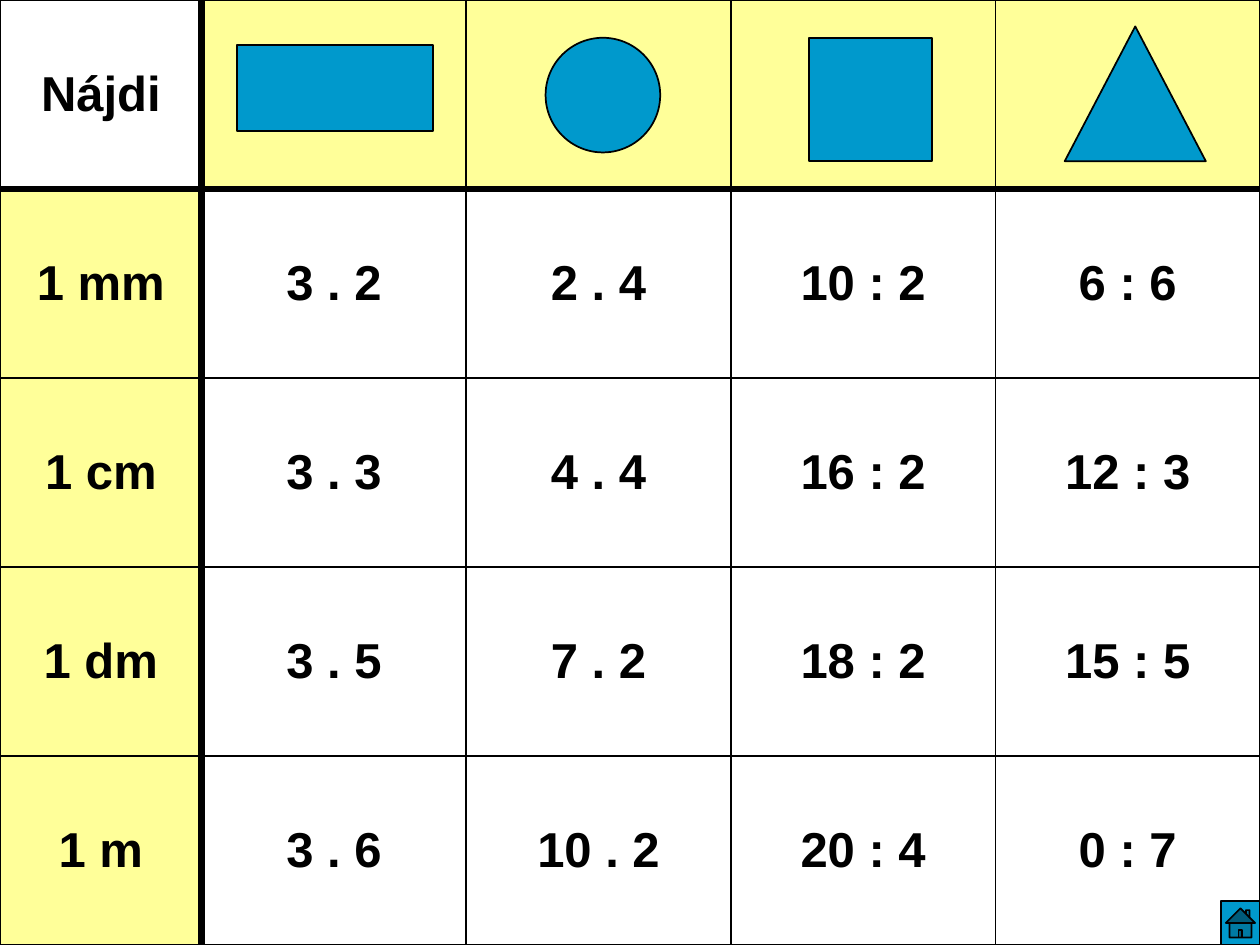
"""Build a matching grid of length units, shapes and sums."""
from lxml import etree
from pptx import Presentation
from pptx.dml.color import RGBColor
from pptx.enum.shapes import MSO_SHAPE
from pptx.enum.text import MSO_ANCHOR, PP_ALIGN
from pptx.oxml.ns import qn
from pptx.util import Inches, Pt

BLACK = RGBColor(0x00, 0x00, 0x00)
YELLOW = RGBColor(0xFF, 0xFF, 0x99)
BLUE = RGBColor(0x00, 0x99, 0xCC)
MIDDLE = MSO_ANCHOR.MIDDLE
CENTER = PP_ALIGN.CENTER
RECT = MSO_SHAPE.RECTANGLE
OVAL = MSO_SHAPE.OVAL
TRIANGLE = MSO_SHAPE.ISOSCELES_TRIANGLE
HOME = MSO_SHAPE.ACTION_BUTTON_HOME
THIN = Pt(1)
THICK = Pt(4.5)

ROWS = [
    ["Nájdi", "", "", "", ""],
    ["1 mm", "3 . 2", "2 . 4", "10 : 2", "6 : 6"],
    ["1 cm", "3 . 3", "4 . 4", "16 : 2", "12 : 3"],
    ["1 dm", "3 . 5", "7 . 2", "18 : 2", "15 : 5"],
    ["1 m", "3 . 6", "10 . 2", "20 : 4", "0 : 7"],
]
SHAPES = [
    (RECT, 1.88, 0.36, 1.56, 0.68),
    (OVAL, 4.33, 0.3, 0.91, 0.91),
    (TRIANGLE, 8.45, 0.21, 1.12, 1.07),
    (RECT, 6.42, 0.3, 0.98, 0.98),
    (HOME, 9.69, 7.15, 0.31, 0.35),
]


def set_edge(cell, side, width):
    props = cell._tc.get_or_add_tcPr()
    line = etree.SubElement(props, qn(f"a:ln{side}"), w=str(width))
    solid = etree.SubElement(line, qn("a:solidFill"))
    etree.SubElement(solid, qn("a:srgbClr"), val=str(BLACK))


deck = Presentation()
deck.slide_width = Inches(10)
deck.slide_height = Inches(7.5)
slide = deck.slides.add_slide(deck.slide_layouts[6])

frame = slide.shapes.add_table(5, 5, 0, 0, Inches(10), Inches(7.5))
table = frame.table
table.first_row = False
table.horz_banding = False
for c, col in enumerate(table.columns):
    col.width = Inches(2.1 if c else 1.6)

for r, row in enumerate(ROWS):
    table.rows[r].height = Inches(1.5)
    for c, text in enumerate(row):
        cell = table.cell(r, c)
        set_edge(cell, "L", THICK if c == 1 else THIN)
        set_edge(cell, "R", THICK if c == 0 else THIN)
        set_edge(cell, "T", THICK if r == 1 else THIN)
        set_edge(cell, "B", THICK if r == 0 else THIN)
        if (r == 0) != (c == 0):
            cell.fill.solid()
            cell.fill.fore_color.rgb = YELLOW
        else:
            cell.fill.background()
        if text:
            cell.vertical_anchor = MIDDLE
            para = cell.text_frame.paragraphs[0]
            para.alignment = CENTER
            run = para.add_run()
            run.text = text
            run.font.name = "Arial"
            run.font.size = Pt(28)
            run.font.bold = True
            run.font.color.rgb = BLACK

for kind, *box in SHAPES:
    shape = slide.shapes.add_shape(kind, *map(Inches, box))
    shape.shadow.inherit = False
    shape.fill.solid()
    shape.fill.fore_color.rgb = BLUE
    shape.line.color.rgb = BLACK
    shape.line.width = THIN

deck.save("out.pptx")
